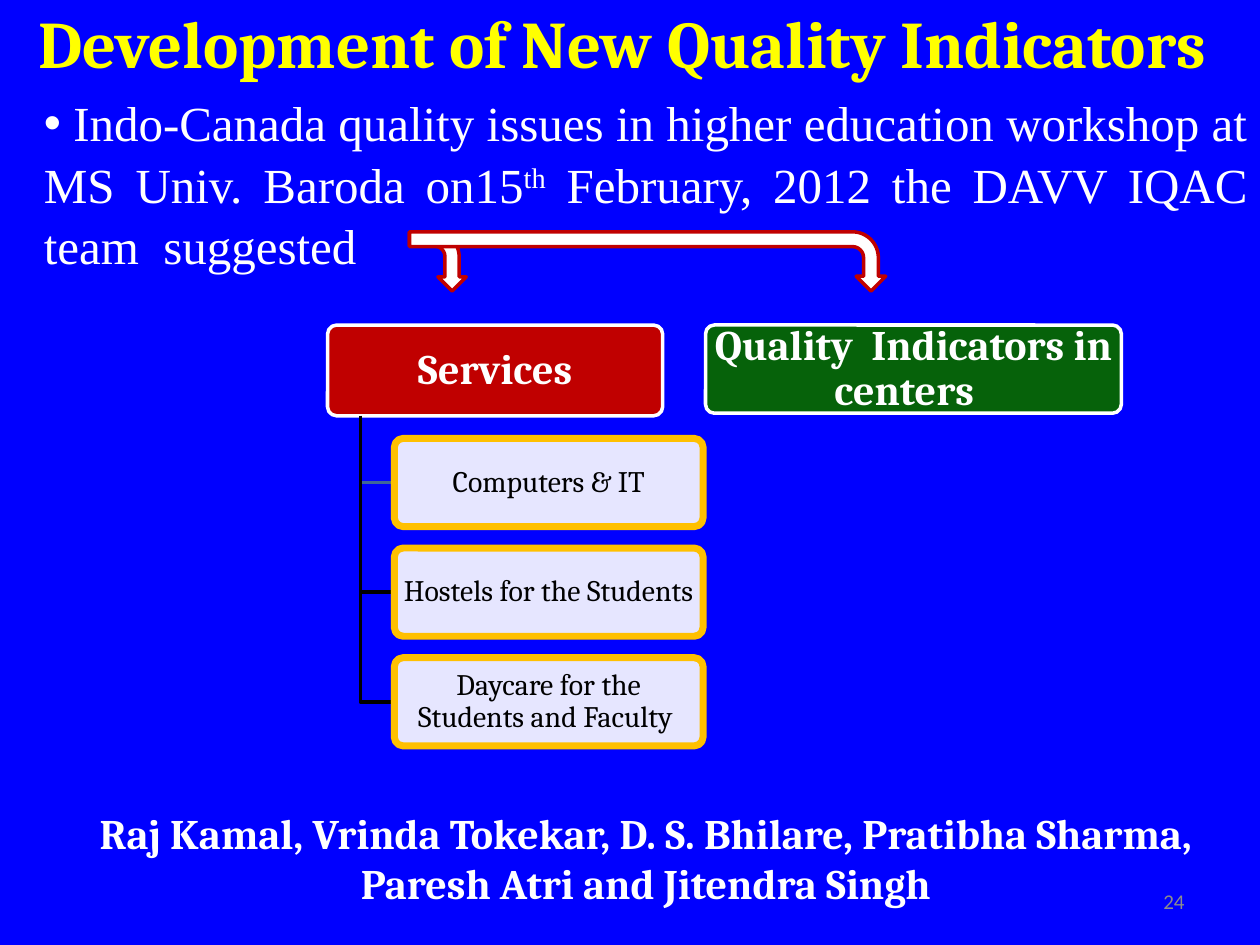
from lxml.etree import SubElement
from pptx import Presentation
from pptx.dml.color import RGBColor
from pptx.enum.shapes import MSO_SHAPE
from pptx.enum.text import MSO_ANCHOR, PP_ALIGN
from pptx.oxml.ns import qn
from pptx.util import Inches, Pt

TITLE = "Development of New Quality Indicators "
INTRO = [
    (" Indo-Canada quality issues in higher education workshop at MS Univ. Baroda on15", False),
    ("th", True),
    (" February, 2012 the DAVV IQAC team  suggested ", False),
]
AUTHORS = "Raj Kamal, Vrinda Tokekar, D. S. Bhilare, Pratibha Sharma, Paresh Atri and Jitendra Singh"
PAGE_NUMBER = "24"

# text, left, width, height, fill
HEADINGS = [
    ("Services", 2.6, 2.66, 0.72, "C00000"),
    ("Quality  Indicators in centers  ", 5.6, 3.3, 0.7, "06620A"),
]
HEADING_TOP = 2.58
# text, colour of the branch leading to it
SERVICES = [
    ("Computers & IT", "3F6797"),
    ("Hostels for the Students", "000000"),
    ("Daycare for the Students and Faculty ", "000000"),
]
SERVICE_LEFT, SERVICE_TOP, SERVICE_WIDTH, SERVICE_HEIGHT = 3.13, 3.48, 2.45, 0.7
SERVICE_STEP = 0.87
TRUNK_X, TRUNK_TOP = 2.86, 3.3

# length of each bent arrow from its shared start
ARROW_LENGTHS = [0.45, 3.78]
ARROW_LEFT, ARROW_TOP, ARROW_DEPTH = 3.25, 1.84, 0.47


def color(value):
    return RGBColor.from_string(value)


def set_text(shape, spans, *, size, font="Cambria", fill="FFFFFF", bold=False,
             align=PP_ALIGN.CENTER, anchor=MSO_ANCHOR.MIDDLE, spacing=None, margins=(0.1, 0.05)):
    """Write one paragraph; spans is a string or a list of (text, superscript)."""
    frame = shape.text_frame
    frame.word_wrap = True
    frame.vertical_anchor = anchor
    frame.margin_left = frame.margin_right = Inches(margins[0])
    frame.margin_top = frame.margin_bottom = Inches(margins[1])
    para = frame.paragraphs[0]
    para.alignment = align
    if spacing:
        para.line_spacing = spacing
    for text, superscript in [(spans, False)] if isinstance(spans, str) else spans:
        span = para.add_run()
        span.text = text
        span.font.name = font
        span.font.size = Pt(size)
        span.font.bold = bold
        span.font.color.rgb = color(fill)
        if superscript:
            span.font._element.set("baseline", "30000")
    return para


def add_text(slide, left, top, width, height, spans, **text_format):
    box = slide.shapes.add_textbox(Inches(left), Inches(top), Inches(width), Inches(height))
    return set_text(box, spans, **text_format)


def style(shape, fill, line, line_width):
    shape.shadow.inherit = False
    if fill:
        shape.fill.solid()
        shape.fill.fore_color.rgb = color(fill)
    else:
        shape.fill.background()
    shape.line.color.rgb = color(line)
    shape.line.width = Pt(line_width)


def add_card(slide, left, top, width, height, fill, line, line_width):
    card = slide.shapes.add_shape(MSO_SHAPE.ROUNDED_RECTANGLE, Inches(left), Inches(top),
                                  Inches(width), Inches(height))
    card.adjustments[0] = 0.1
    style(card, fill, line, line_width)
    return card


def add_branch(slide, end_y, line):
    """Draw the trunk down to end_y and the turn right to a service."""
    builder = slide.shapes.build_freeform(Inches(TRUNK_X), Inches(TRUNK_TOP))
    builder.add_line_segments([(Inches(TRUNK_X), Inches(end_y)),
                               (Inches(SERVICE_LEFT), Inches(end_y))], close=False)
    style(builder.convert_to_shape(), None, line, 2)


def add_bent_arrow(slide, length):
    """Place a bent arrow that, turned by 90 degrees, runs right and then down."""
    left = ARROW_LEFT + (length - ARROW_DEPTH) / 2
    top = ARROW_TOP + (ARROW_DEPTH - length) / 2
    arrow = slide.shapes.add_shape(MSO_SHAPE.BENT_ARROW, Inches(left), Inches(top),
                                   Inches(ARROW_DEPTH), Inches(length))
    arrow.rotation = 90
    style(arrow, "FFFFFF", "C00000", 2)


def add_bullet(para):
    properties = para._p.get_or_add_pPr()
    properties.set("marL", "0")
    properties.set("indent", "0")
    SubElement(properties, qn("a:buFont"), typeface="Arial")
    SubElement(properties, qn("a:buChar"), char="•")


def main():
    deck = Presentation()
    deck.slide_width, deck.slide_height = Inches(10), Inches(7.5)
    slide = deck.slides.add_slide(deck.slide_layouts[5])
    slide.background.fill.solid()
    slide.background.fill.fore_color.rgb = color("0000FF")

    title = slide.shapes.title
    title.left, title.top, title.width, title.height = 0, 0, Inches(10), Inches(0.67)
    set_text(title, TITLE, size=38, fill="FFFF00", bold=True)

    intro = add_text(slide, 0.25, 0.67, 9.75, 1.5, INTRO, size=28, font="Times New Roman",
                     align=PP_ALIGN.JUSTIFY, anchor=MSO_ANCHOR.TOP, spacing=1.04)
    add_bullet(intro)
    add_text(slide, 0.25, 6.36, 9.75, 0.9, AUTHORS, size=24, bold=True, anchor=MSO_ANCHOR.TOP)
    add_text(slide, 7.17, 6.95, 2.33, 0.4, PAGE_NUMBER, size=12, font="Calibri",
             fill="8C8C8C", align=PP_ALIGN.RIGHT)

    for text, left, width, height, fill in HEADINGS:
        card = add_card(slide, left, HEADING_TOP, width, height, fill, "FFFFFF", 2)
        set_text(card, text, size=24, bold=True, spacing=0.9, margins=(0.05, 0.03))

    for index, (text, branch_color) in enumerate(SERVICES):
        top = SERVICE_TOP + index * SERVICE_STEP
        add_branch(slide, top + SERVICE_HEIGHT / 2, branch_color)
        card = add_card(slide, SERVICE_LEFT, top, SERVICE_WIDTH, SERVICE_HEIGHT,
                        "FFFFFF", "FFC000", 4)
        fill_color = card.fill._xPr.find(qn("a:solidFill"))[0]
        SubElement(fill_color, qn("a:alpha"), val="90000")
        set_text(card, text, size=17, fill="000000", spacing=0.9, margins=(0.04, 0.02))

    for length in ARROW_LENGTHS:
        add_bent_arrow(slide, length)

    deck.save("out.pptx")


if __name__ == "__main__":
    main()
